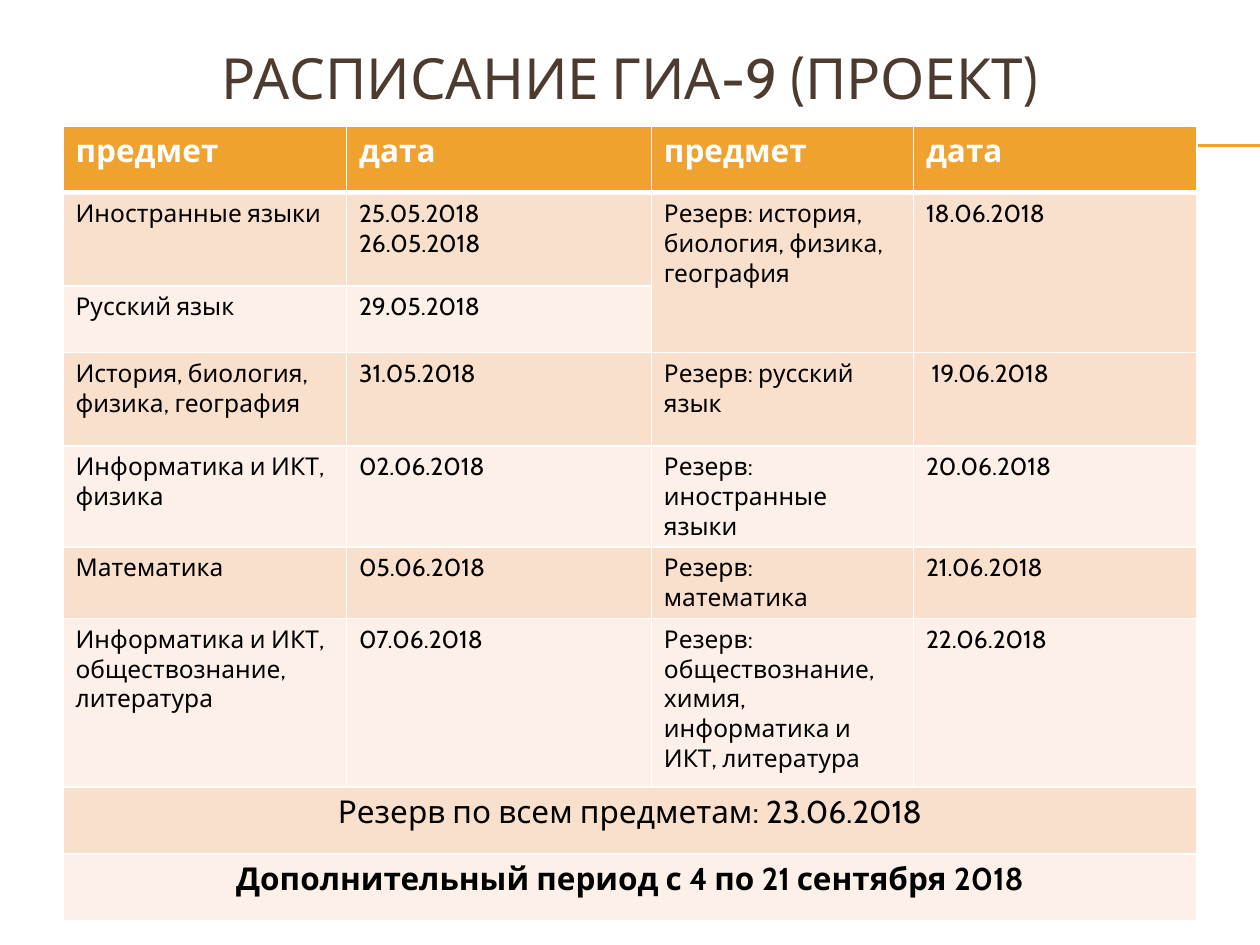
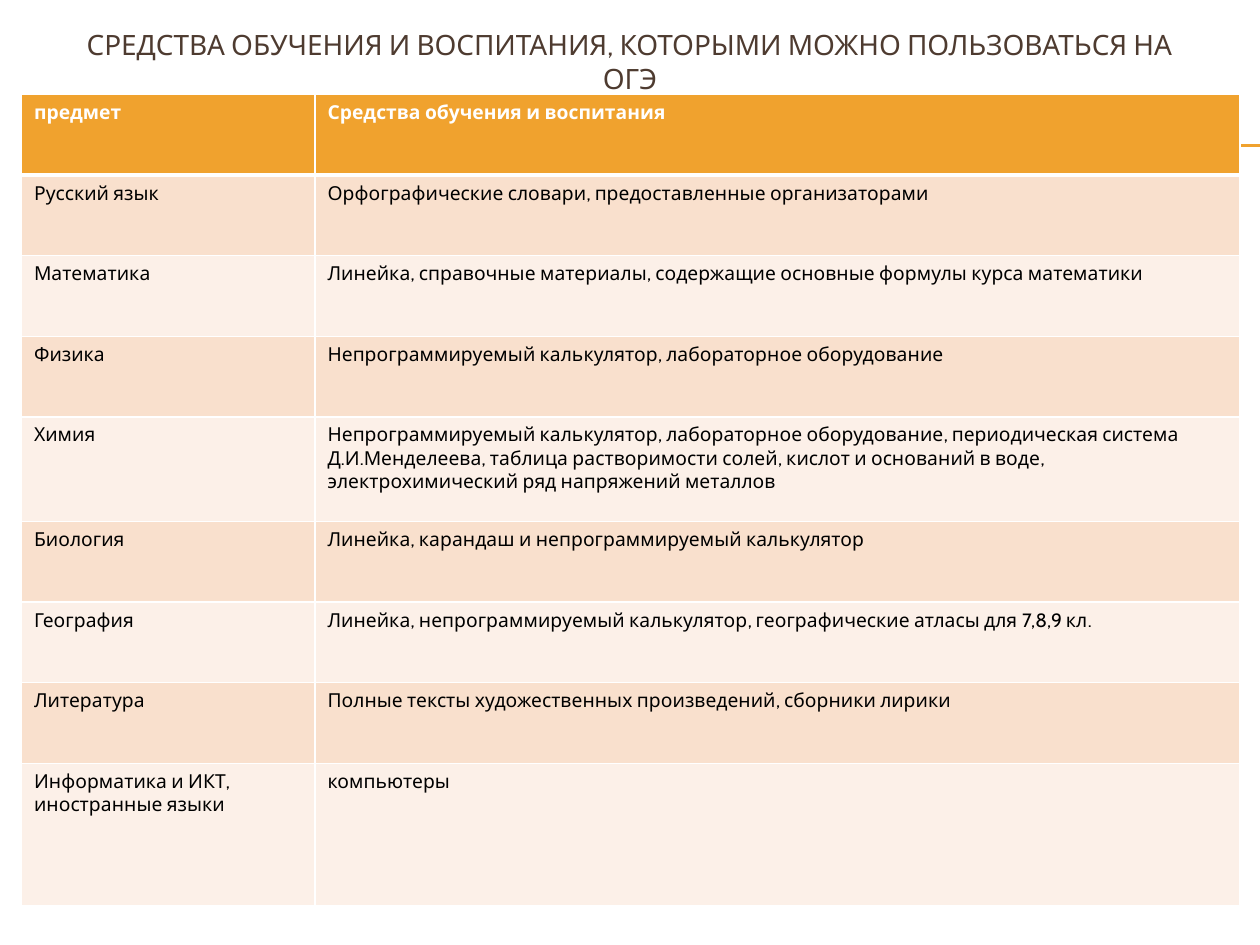
"""Build two slides with the exam timetable and the permitted study aids."""
from lxml import etree
from pptx import Presentation
from pptx.dml.color import RGBColor
from pptx.enum.shapes import MSO_CONNECTOR
from pptx.enum.text import MSO_ANCHOR, PP_ALIGN
from pptx.oxml.ns import qn
from pptx.util import Inches, Pt

CENTER = PP_ALIGN.CENTER
LEFT = PP_ALIGN.LEFT
MIDDLE = MSO_ANCHOR.MIDDLE
STRAIGHT = MSO_CONNECTOR.STRAIGHT

COLORS = {
    "accent": "F0A22E",
    "title": "4E3B30",
    "text": "000000",
    "white": "FFFFFF",
    "band_dark": "F9E0CD",
    "band_light": "FCF0E8",
}
FONT = "Cabin"

TIMETABLE = [
    ["предмет", "дата", "предмет", "дата"],
    ["Иностранные языки", "25.05.2018\n26.05.2018",
     "Резерв: история, биология, физика, география", "18.06.2018"],
    ["Русский язык", "29.05.2018"],
    ["История, биология, физика, география", "31.05.2018",
     "Резерв: русский язык", " 19.06.2018"],
    ["Информатика и ИКТ, физика", "02.06.2018",
     "Резерв: иностранные языки", "20.06.2018"],
    ["Математика", "05.06.2018", "Резерв: математика", "21.06.2018"],
    ["Информатика и ИКТ, обществознание, литература", "07.06.2018",
     "Резерв: обществознание, химия, информатика и ИКТ, литература",
     "22.06.2018"],
    ["Резерв по всем предметам: 23.06.2018"],
    ["Дополнительный период с 4 по 21 сентября 2018"],
]
TIMETABLE_COLS = [2.25, 2.42, 2.08, 2.25]
TIMETABLE_ROWS = [0.53, 0.74, 0.53, 0.74, 0.74, 0.53, 1.34, 0.53, 0.53]
TIMETABLE_MERGES = [((1, 2), (2, 2)), ((1, 3), (2, 3)),
                    ((7, 0), (7, 3)), ((8, 0), (8, 3))]

AIDS = [
    ["предмет", "Средства обучения и воспитания"],
    ["Русский язык",
     "Орфографические словари, предоставленные организаторами"],
    ["Математика", "Линейка, справочные материалы, содержащие основные "
                   "формулы курса математики"],
    ["Физика", "Непрограммируемый калькулятор, лабораторное оборудование"],
    ["Химия", "Непрограммируемый калькулятор, лабораторное оборудование, "
              "периодическая система Д.И.Менделеева, таблица растворимости "
              "солей, кислот и оснований в воде, электрохимический ряд "
              "напряжений металлов"],
    ["Биология", "Линейка, карандаш и непрограммируемый калькулятор"],
    ["География", "Линейка, непрограммируемый калькулятор, географические "
                  "атласы для 7,8,9 кл."],
    ["Литература",
     "Полные тексты художественных произведений, сборники лирики"],
    ["Информатика и ИКТ, иностранные языки", "компьютеры"],
]
AIDS_COLS = [2.33, 7.34]
AIDS_ROWS = [0.64] * 4 + [0.83] + [0.64] * 3 + [1.13]


class Deck:
    """Hold the shared style and the current slide."""

    def __init__(self):
        self.prs = Presentation()
        self.prs.slide_width = Inches(10)
        self.prs.slide_height = Inches(7.5)
        self.s = None

    def color(self, name):
        return RGBColor.from_string(COLORS[name])

    def add_slide(self, title, size, height):
        self.s = self.prs.slides.add_slide(self.prs.slide_layouts[6])
        fill = self.s.background.fill
        fill.solid()
        fill.fore_color.rgb = self.color("white")
        for y in (1.15, 1.16):
            self.add_rule(y)
        self.add_title(title, size, height)

    def add_rule(self, y):
        sp = self.s.shapes.add_connector(
            STRAIGHT, Inches(0.56), Inches(y), Inches(10), Inches(y))
        sp.line.color.rgb = self.color("accent")
        sp.line.width = Pt(0.75)
        etree.SubElement(sp.element.spPr, qn("a:effectLst"))

    def add_title(self, text, size, height):
        sp = self.s.shapes.add_textbox(
            Inches(0.5), Inches(0.3), Inches(9), Inches(height))
        tf = sp.text_frame
        tf.word_wrap = True
        tf.vertical_anchor = MIDDLE
        self.set_text(tf, text, size, "title", align=CENTER)

    def set_text(self, tf, text, size, color, bold=False, align=LEFT):
        tf.text = text
        for p in tf.paragraphs:
            p.alignment = align
            for r in p.runs:
                r.font.name = FONT
                r.font.size = Pt(size)
                r.font.bold = bold
                r.font.color.rgb = self.color(color)

    def set_borders(self, cell, row):
        tcPr = cell._tc.get_or_add_tcPr()
        widths = {"lnL": 1, "lnR": 1, "lnT": 3 if row == 1 else 1,
                  "lnB": 3 if row == 0 else 1}
        for side, width in widths.items():
            ln = etree.SubElement(tcPr, qn(f"a:{side}"), w=str(Pt(width)))
            fill = etree.SubElement(ln, qn("a:solidFill"))
            etree.SubElement(fill, qn("a:srgbClr"), val=COLORS["white"])

    def add_table(self, left, top, cols, rows, data, head_size, size, merges=()):
        table = self.s.shapes.add_table(
            len(rows), len(cols), Inches(left), Inches(top),
            Inches(sum(cols)), Inches(sum(rows))).table
        for col, width in zip(table.columns, cols):
            col.width = Inches(width)
        for row, height in zip(table.rows, rows):
            row.height = Inches(height)
        for first, last in merges:
            table.cell(*first).merge(table.cell(*last))
        for i in range(len(rows)):
            band = "accent" if i == 0 else "band_dark" if i % 2 else "band_light"
            for j in range(len(cols)):
                cell = table.cell(i, j)
                self.set_borders(cell, i)
                cell.fill.solid()
                cell.fill.fore_color.rgb = self.color(band)
            for j, text in enumerate(data[i]):
                wide = len(data[i]) == 1
                self.set_text(
                    table.cell(i, j).text_frame, text,
                    head_size if i == 0 or wide else size,
                    "white" if i == 0 else "text",
                    bold=i == 0 or (wide and i == len(rows) - 1),
                    align=CENTER if wide else LEFT)


def main():
    deck = Deck()
    deck.add_slide("РАСПИСАНИЕ ГИА-9 (ПРОЕКТ)", 32.4, 0.62)
    deck.add_table(0.5, 1, TIMETABLE_COLS, TIMETABLE_ROWS, TIMETABLE, 18, 14,
                   TIMETABLE_MERGES)
    deck.add_slide("СРЕДСТВА ОБУЧЕНИЯ И ВОСПИТАНИЯ, КОТОРЫМИ МОЖНО "
                   "ПОЛЬЗОВАТЬСЯ НА ОГЭ", 16, 0.37)
    deck.add_table(0.17, 0.75, AIDS_COLS, AIDS_ROWS, AIDS, 11, 11)
    deck.prs.save("out.pptx")


if __name__ == "__main__":
    main()
